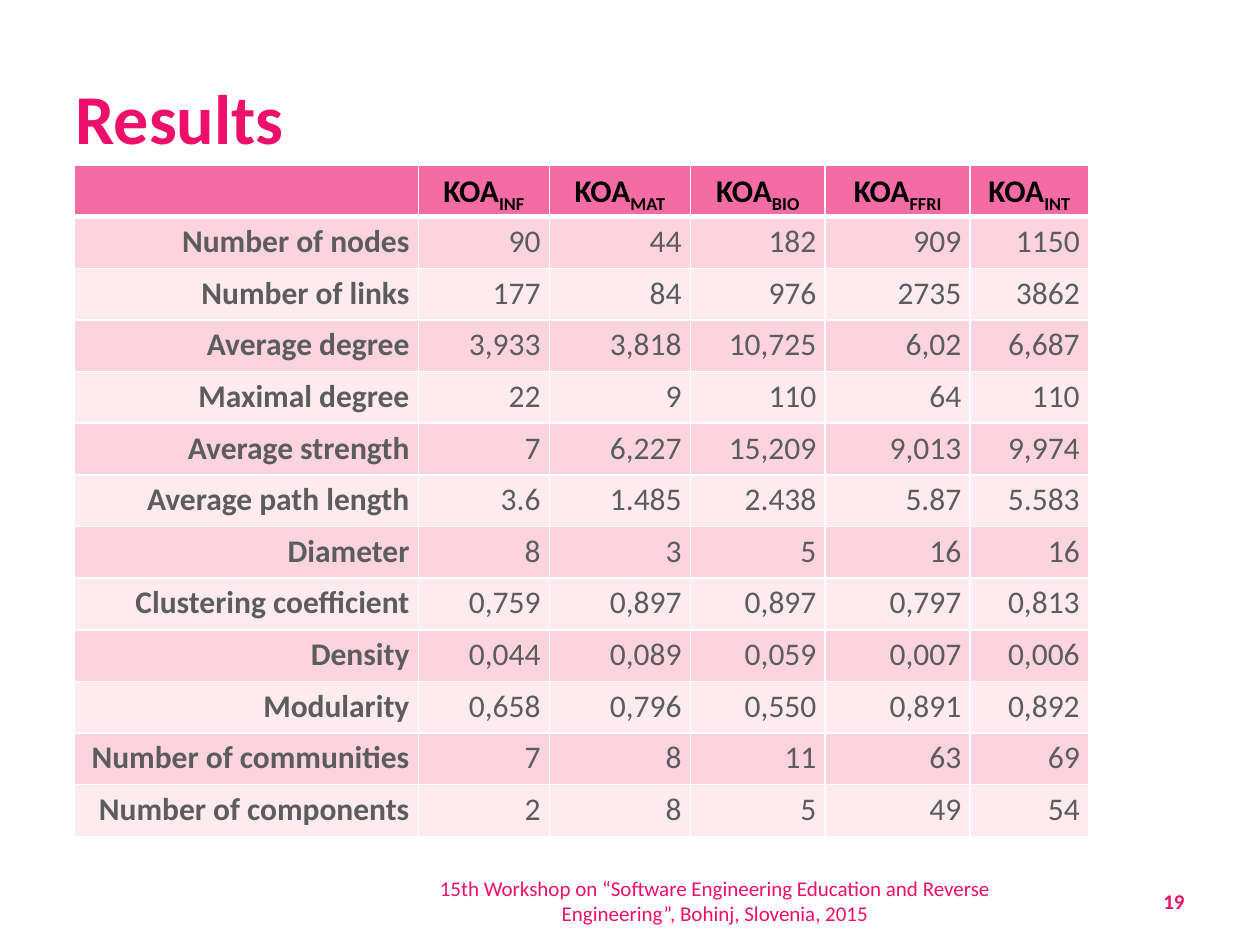
from lxml.etree import SubElement
from pptx import Presentation
from pptx.dml.color import RGBColor
from pptx.enum.text import MSO_ANCHOR, PP_ALIGN
from pptx.oxml.ns import qn
from pptx.util import Inches, Pt

FONT = "Calibri"
PINK = RGBColor(0xED, 0x0F, 0x69)
HEADER = RGBColor(0xF5, 0x6B, 0xA3)
BANDS = (RGBColor(0xFB, 0xD4, 0xE0), RGBColor(0xFD, 0xEB, 0xF0))
GREY = RGBColor(0x5C, 0x5C, 0x5C)
BLACK = RGBColor(0, 0, 0)
WHITE = RGBColor(0xFF, 0xFF, 0xFF)

NETWORKS = ["INF", "MAT", "BIO", "FFRI", "INT"]
MEASURES = [
    ("Number of nodes", "90", "44", "182", "909", "1150"),
    ("Number of links", "177", "84", "976", "2735", "3862"),
    ("Average degree", "3,933", "3,818", "10,725", "6,02", "6,687"),
    ("Maximal degree", "22", "9", "110", "64", "110"),
    ("Average strength", "7", "6,227", "15,209", "9,013", "9,974"),
    ("Average path length", "3.6", "1.485", "2.438", "5.87", "5.583"),
    ("Diameter", "8", "3", "5", "16", "16"),
    ("Clustering coefficient", "0,759", "0,897", "0,897", "0,797", "0,813"),
    ("Density", "0,044", "0,089", "0,059", "0,007", "0,006"),
    ("Modularity", "0,658", "0,796", "0,550", "0,891", "0,892"),
    ("Number of communities", "7", "8", "11", "63", "69"),
    ("Number of components", "2", "8", "5", "49", "54"),
]
COL_WIDTHS = [2.73, 1.04, 1.12, 1.07, 1.15, 0.94]
ROW_HEIGHT = 0.41


def style_font(font, size, color, bold=False):
    font.name, font.size, font.bold = FONT, Pt(size), bold
    font.color.rgb = color


def set_borders(cell, bottom=1):
    tc_pr = cell._tc.get_or_add_tcPr()
    for i, (side, width) in enumerate(zip("LRTB", (1, 1, 1, bottom))):
        ln = SubElement(tc_pr, qn(f"a:ln{side}"), w=str(Pt(width)))
        fill = SubElement(ln, qn("a:solidFill"))
        SubElement(fill, qn("a:srgbClr"), val=str(WHITE))
        tc_pr.insert(i, ln)  # borders come before the fill


def format_cell(cell, fill, align, anchor, bottom=1):
    cell.fill.solid()
    cell.fill.fore_color.rgb = fill
    cell.margin_left = cell.margin_right = Inches(0.07)
    cell.margin_top = cell.margin_bottom = 0
    cell.vertical_anchor = anchor
    set_borders(cell, bottom)
    p = cell.text_frame.paragraphs[0]
    p.alignment, p.line_spacing, p.space_after = align, 1.15, Pt(6)
    return p


def add_title(s, left, top, width, height):
    title = s.shapes.title
    title.left, title.top = Inches(left), Inches(top)
    title.width, title.height = Inches(width), Inches(height)
    tf = title.text_frame
    tf.text = "Results"
    tf.vertical_anchor = MSO_ANCHOR.MIDDLE
    p = tf.paragraphs[0]
    p.alignment = PP_ALIGN.LEFT
    style_font(p.runs[0].font, 40, PINK, True)


def add_results_table(s, left, top):
    rows = len(MEASURES) + 1
    table = s.shapes.add_table(
        rows, len(COL_WIDTHS), Inches(left), Inches(top),
        Inches(sum(COL_WIDTHS)), Inches(rows * ROW_HEIGHT)).table
    for column, width in zip(table.columns, COL_WIDTHS):
        column.width = Inches(width)
    for row in table.rows:
        row.height = Inches(ROW_HEIGHT)

    # Header: network names with subscripts
    for col, name in enumerate([""] + NETWORKS):
        p = format_cell(table.cell(0, col), HEADER, PP_ALIGN.CENTER,
                        MSO_ANCHOR.MIDDLE, bottom=3)
        if name:
            for text in ("KOA", name):
                r = p.add_run()
                r.text = text
                style_font(r.font, 18, BLACK, True)
            r.font._element.set("baseline", "-25000")

    # Body: bold measure names, then values
    for row, values in enumerate(MEASURES, 1):
        for col, value in enumerate(values):
            p = format_cell(table.cell(row, col), BANDS[(row - 1) % 2],
                            PP_ALIGN.RIGHT, MSO_ANCHOR.TOP)
            p.text = value
            style_font(p.runs[0].font, 18, GREY, col == 0)


def add_footer_text(s, text, left, top, width, height, align, bold=False):
    tf = s.shapes.add_textbox(Inches(left), Inches(top),
                              Inches(width), Inches(height)).text_frame
    tf.word_wrap = True
    tf.vertical_anchor = MSO_ANCHOR.MIDDLE
    tf.text = text
    p = tf.paragraphs[0]
    p.alignment = align
    style_font(p.runs[0].font, 12, PINK, bold)


def main():
    prs = Presentation()
    prs.slide_width, prs.slide_height = Inches(10), Inches(7.5)
    s = prs.slides.add_slide(prs.slide_layouts[5])
    add_title(s, 0.5, 0.3, 9, 1.25)
    add_results_table(s, 0.59, 1.31)
    # Footer and slide number
    add_footer_text(s, "15th Workshop on “Software Engineering Education and "
                    "Reverse Engineering”, Bohinj, Slovenia, 2015",
                    2.95, 6.95, 5.45, 0.4, PP_ALIGN.CENTER)
    add_footer_text(s, "19", 8.5, 6.95, 1, 0.4, PP_ALIGN.RIGHT, True)
    prs.save("out.pptx")


if __name__ == "__main__":
    main()
